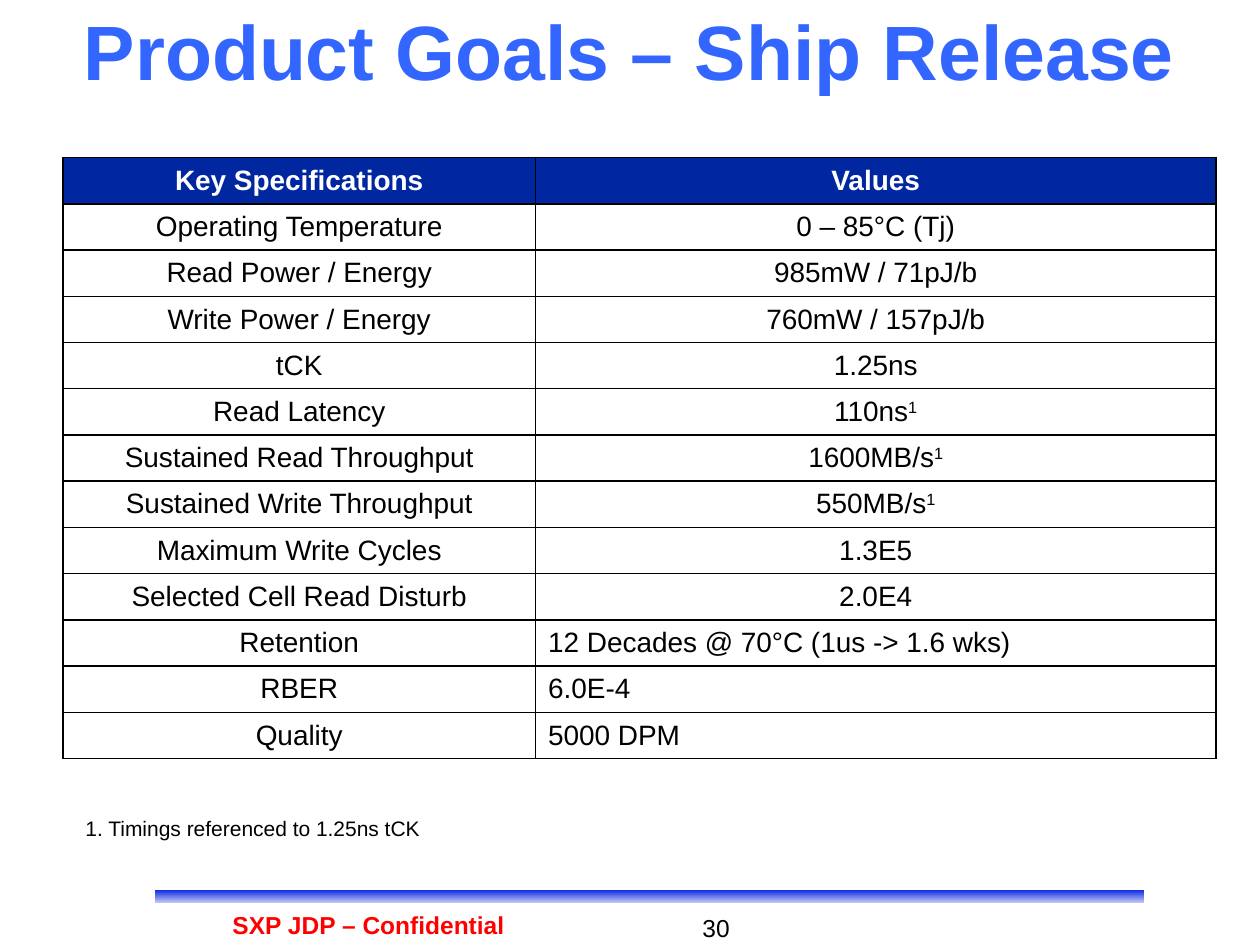
"""Build the product goals slide with its table of key specifications."""
import pptx
import pptx.util
import pptx.dml.color
import pptx.enum.text
import pptx.enum.shapes
import pptx.oxml

tint = {"title": "3366FF", "head": "00279F", "text": "000000", "note": "FF0000",
        "white": "FFFFFF", "deep": "0020E0", "pale": "DADAF6"}
hue = {name: pptx.dml.color.RGBColor.from_string(code) for name, code in tint.items()}
side = pptx.enum.text.PP_ALIGN
mid = pptx.enum.text.MSO_ANCHOR.MIDDLE
NS = "http://schemas.openxmlformats.org/drawingml/2006/main"

deck = pptx.Presentation()
deck.slide_width, deck.slide_height = pptx.util.Inches(10), pptx.util.Inches(7.5)
slide = deck.slides.add_slide(deck.slide_layouts[6])


def place(*box):
    full = (deck.slide_width, deck.slide_height) * 2
    return [int(part * size / 100) for part, size in zip(box, full)]


def write(frame, text, align, size, color, bold=False):
    para = frame.paragraphs[0]
    para.alignment = align
    for step, part in enumerate(text.split("^")):
        run = para.add_run()
        run.text = part
        style = {"name": "Arial", "size": pptx.util.Pt(size), "bold": bold}
        for key, value in style.items():
            setattr(run.font, key, value)
        run.font.color.rgb = hue[color]
        if step:
            run.font._element.set("baseline", "30000")


bar = slide.shapes.add_shape(pptx.enum.shapes.MSO_SHAPE.RECTANGLE, *place(12.2, 94.1, 78.7, 1.6))
bar.shadow.inherit = False
bar.fill.gradient()
bar.fill.gradient_angle = 270
for stop, name, spot in zip(bar.fill.gradient_stops, ("deep", "pale"), (0, 1)):
    stop.color.rgb = hue[name]
    stop.position = spot
bar.line.color.rgb = hue["white"]
bar.line.width = pptx.util.Pt(1)

labels = [
    ((5, 1.07, 90, 8.27), "Product Goals – Ship Release", side.CENTER, 44, "title", True, mid),
    ((5.8, 85.6, 40, 4), "1. Timings referenced to 1.25ns tCK", side.LEFT, 12, "text", False, None),
    ((47.5, 96, 11.4, 3.6), "30", side.RIGHT, 14, "text", False, None),
    ((13.3, 95.6, 31.9, 3.47), "SXP JDP – Confidential", side.CENTER, 14, "note", True, None),
]
for box, text, align, size, color, bold, anchor in labels:
    frame = slide.shapes.add_textbox(*place(*box)).text_frame
    frame.word_wrap = True
    if anchor:
        frame.vertical_anchor = anchor
    write(frame, text, align, size, color, bold)

rows = [
    ("Key Specifications", "Values"),
    ("Operating Temperature", "0 – 85°C (Tj)"),
    ("Read Power / Energy", "985mW / 71pJ/b"),
    ("Write Power / Energy", "760mW / 157pJ/b"),
    ("tCK", "1.25ns"),
    ("Read Latency", "110ns^1"),
    ("Sustained Read Throughput", "1600MB/s^1"),
    ("Sustained Write Throughput", "550MB/s^1"),
    ("Maximum Write Cycles", "1.3E5"),
    ("Selected Cell Read Disturb", "2.0E4"),
    ("Retention", "12 Decades @ 70°C (1us -> 1.6 wks)"),
    ("RBER", "6.0E-4"),
    ("Quality", "5000 DPM"),
]
left = ("Retention", "RBER", "Quality")
grid = slide.shapes.add_table(len(rows), 2, *place(5, 16.67, 91.5, 60.2)).table
grid.first_row = grid.horz_banding = False
for col, share in zip(grid.columns, (37.5, 54)):
    col.width = place(share)[0]
for r, row in enumerate(rows):
    grid.rows[r].height = pptx.util.Inches(0.34)
    for c, text in enumerate(row):
        cell = grid.cell(r, c)
        cell.vertical_anchor = mid
        for edge in "LRTB":
            cell._tc.get_or_add_tcPr().append(pptx.oxml.parse_xml(
                f'<a:ln{edge} xmlns:a="{NS}" w="12700"><a:solidFill>'
                f'<a:srgbClr val="{tint["text"]}"/></a:solidFill></a:ln{edge}>'))
        if r == 0:
            cell.fill.solid()
            cell.fill.fore_color.rgb = hue["head"]
        else:
            cell.fill.background()
        align = side.LEFT if c and row[0] in left else side.CENTER
        write(cell.text_frame, text, align, 16, "text" if r else "white", r == 0)

deck.save("out.pptx")
